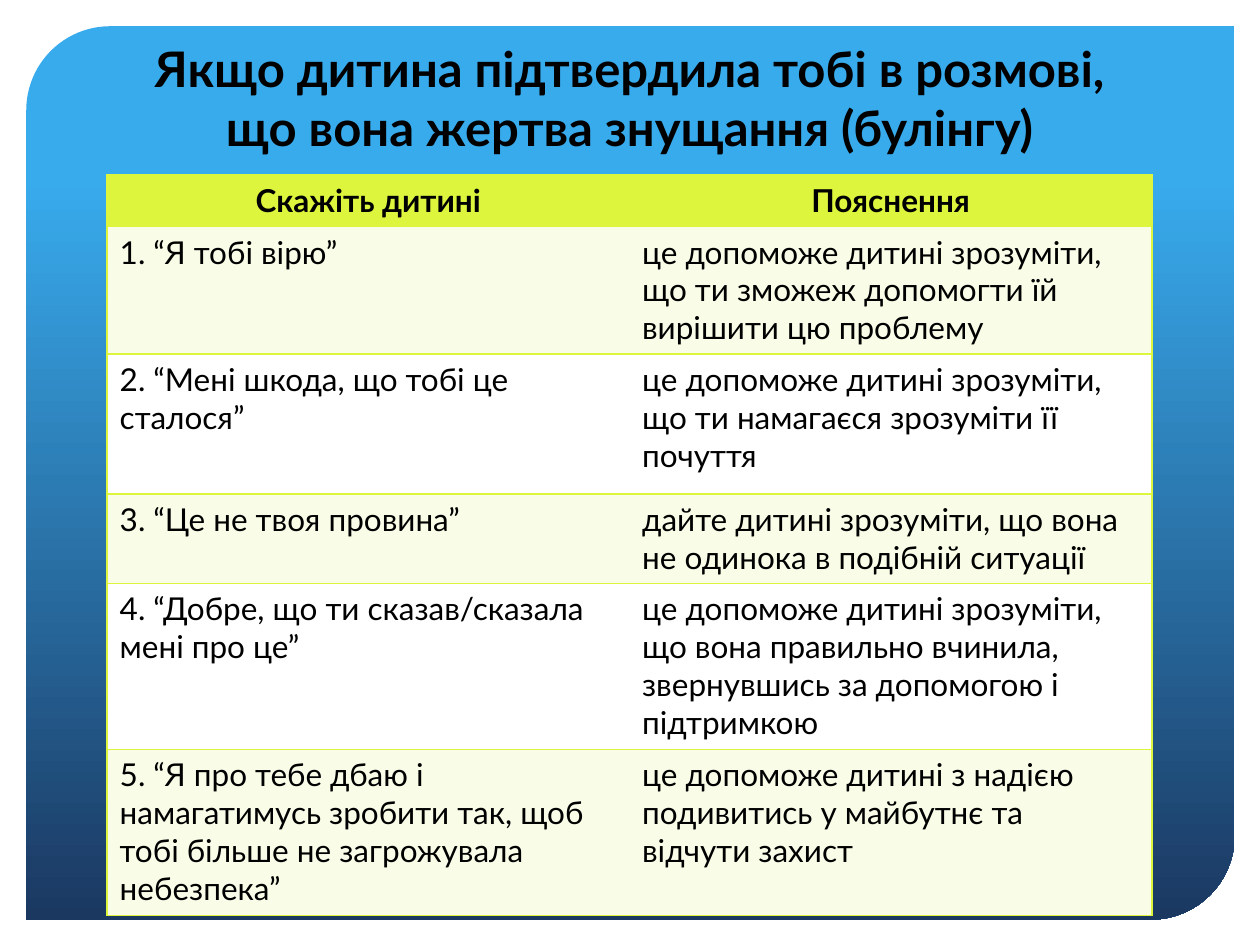
from typing import NamedTuple

from lxml.etree import SubElement
from pptx import Presentation
from pptx.dml.color import RGBColor
from pptx.enum.shapes import MSO_SHAPE as Preset
from pptx.enum.text import MSO_ANCHOR as Anchor, PP_ALIGN as Align
from pptx.oxml import parse_xml
from pptx.oxml.ns import nsdecls, qn
from pptx.util import Cm, Pt

COLORS = {
    "sky": "38ABED",
    "navy": "1B3861",
    "lime": "DDF53D",
    "pale": "F9FDE8",
    "white": "FFFFFF",
    "black": "000000",
}
FONT = "Lato"
LEFT, WIDTH = Cm(2.16), Cm(21.06)
TITLE = "Якщо дитина підтвердила тобі в розмові, що вона жертва знущання (булінгу)"


class Advice(NamedTuple):
    phrase: str
    reason: str
    height: float


HEADING = Advice("Скажіть дитині", "Пояснення", 1.04)
ADVICE = [
    Advice("1. “Я тобі вірю”",
           "це допоможе дитині зрозуміти, що ти зможеж допомогти їй вирішити цю проблему", 2.57),
    Advice("2. “Мені шкода, що тобі це сталося”",
           "це допоможе дитині зрозуміти, що ти намагаєся зрозуміти її почуття", 2.82),
    Advice("3. “Це не твоя провина”",
           "дайте дитині зрозуміти, що вона не одинока в подібній ситуації", 1.8),
    Advice("4. “Добре, що ти сказав/сказала мені про це”",
           "це допоможе дитині зрозуміти, що вона правильно вчинила, "
           "звернувшись за допомогою і підтримкою", 3.35),
    Advice("5. “Я про тебе дбаю і намагатимусь зробити так, щоб тобі більше не загрожувала небезпека”",
           "це допоможе дитині з надією подивитись у майбутнє та відчути захист", 3.35),
]


def rgb(name: str) -> RGBColor:
    return RGBColor.from_string(COLORS[name])


def write(frame, text: str, *, size=18, bold=False, align=Align.LEFT, color="black") -> None:
    frame.word_wrap = True
    paragraph = frame.paragraphs[0]
    paragraph.alignment = align
    run = paragraph.add_run()
    run.text = text
    run.font.name = FONT
    run.font.size = Pt(size)
    run.font.bold = bold
    run.font.color.rgb = rgb(color)


def set_borders(cell, visible: str) -> None:
    properties = cell._tc.get_or_add_tcPr()
    for position, side in enumerate("LRTB"):
        border = parse_xml(f'<a:ln{side} {nsdecls("a")} w="{Pt(1)}"/>')
        if side in visible:
            fill = SubElement(border, qn("a:solidFill"))
            SubElement(fill, qn("a:srgbClr"), val=COLORS["lime"])
        else:
            SubElement(border, qn("a:noFill"))
        properties.insert(position, border)


def add_backdrop(slide) -> None:
    backdrop = slide.shapes.add_shape(
        Preset.ROUND_2_DIAG_RECTANGLE, Cm(0.53), Cm(0.53), Cm(24.36), Cm(18.01))
    backdrop.shadow.inherit = False
    backdrop.adjustments[0] = 0.094
    backdrop.adjustments[1] = 0
    backdrop.line.fill.background()
    backdrop.fill.gradient()
    backdrop.fill.gradient_angle = 270
    for stop, (position, color) in zip(backdrop.fill.gradient_stops, [(0.17, "sky"), (1, "navy")]):
        stop.position = position
        stop.color.rgb = rgb(color)


def add_title(slide) -> None:
    title = slide.shapes.add_textbox(LEFT, Cm(-0.61), WIDTH, Cm(3.89)).text_frame
    title.vertical_anchor = Anchor.BOTTOM
    write(title, TITLE, size=28, bold=True, align=Align.CENTER)


def add_advice_table(slide) -> None:
    rows = [HEADING, *ADVICE]
    height = Cm(sum(row.height for row in rows))
    table = slide.shapes.add_table(len(rows), 2, LEFT, Cm(3.53), WIDTH, height).table
    table.first_row = table.horz_banding = False
    for index, row in enumerate(rows):
        table.rows[index].height = Cm(row.height)
        heading = index == 0
        shade = "lime" if heading else ("white", "pale")[index % 2]
        for column, (text, sides) in enumerate([(row.phrase, "LTB"), (row.reason, "RTB")]):
            cell = table.cell(index, column)
            set_borders(cell, sides)
            cell.fill.solid()
            cell.fill.fore_color.rgb = rgb(shade)
            write(cell.text_frame, text, bold=heading,
                  align=Align.CENTER if heading else Align.LEFT)


def main() -> None:
    """Build the slide on supporting a bullied child."""
    deck = Presentation()
    deck.slide_width, deck.slide_height = Cm(25.4), Cm(19.05)
    slide = deck.slides.add_slide(deck.slide_layouts[6])
    add_backdrop(slide)
    add_title(slide)
    add_advice_table(slide)
    deck.save("out.pptx")


if __name__ == "__main__":
    main()
